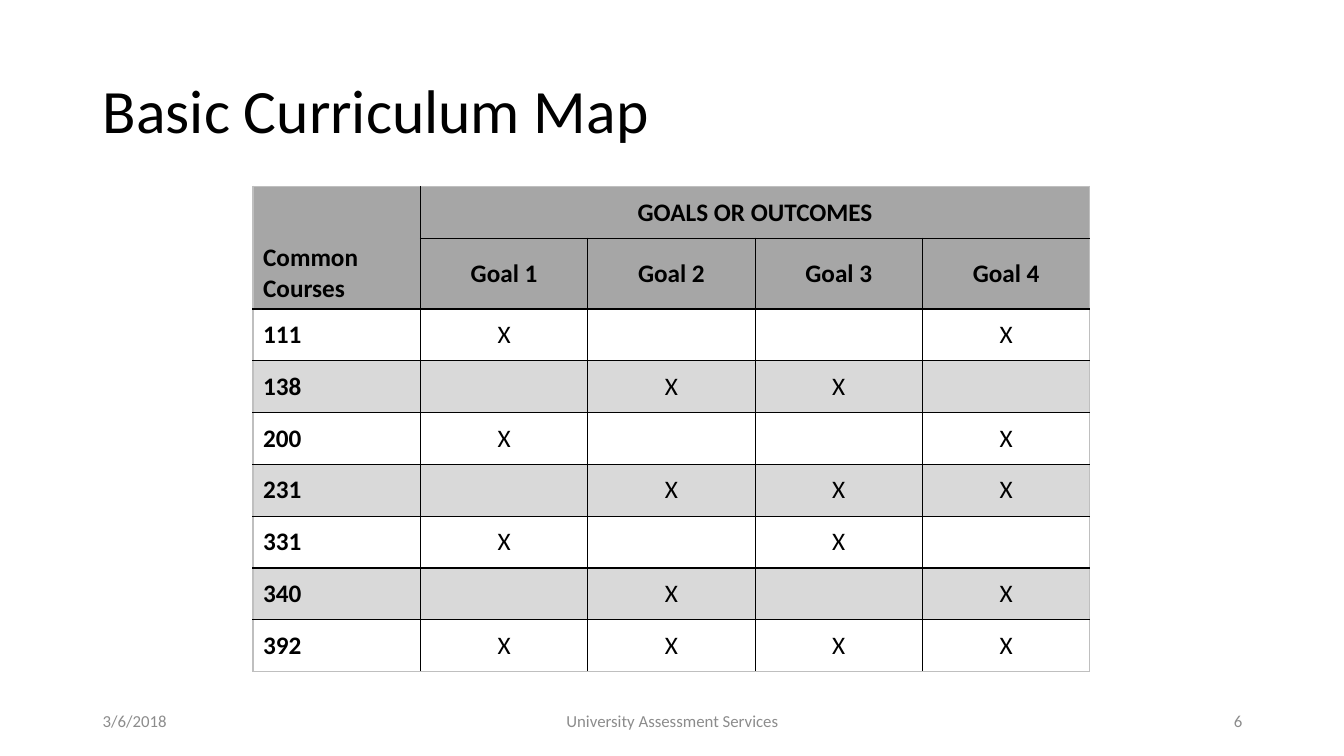
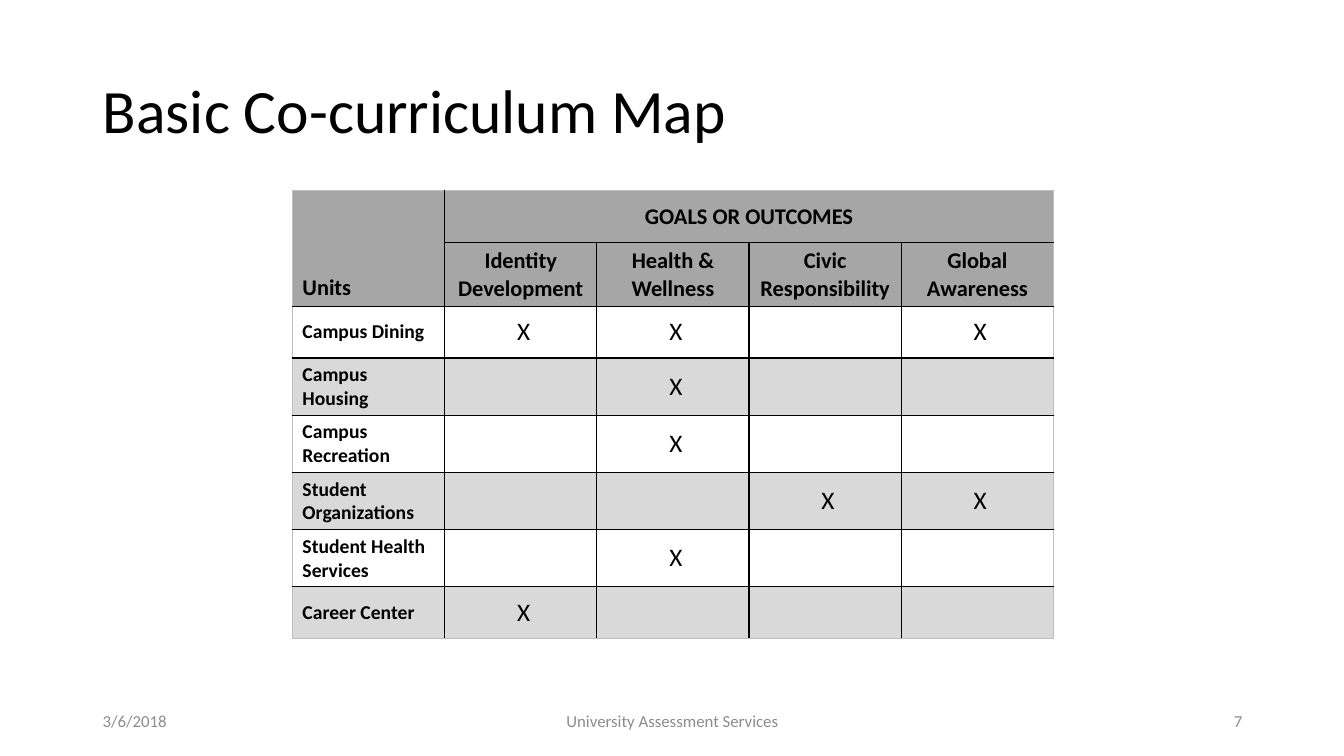
"""Build two curriculum map slides."""
from lxml.etree import SubElement
from pptx import Presentation
from pptx.dml.color import RGBColor
from pptx.enum.text import MSO_ANCHOR, MSO_AUTO_SIZE, PP_ALIGN
from pptx.oxml.ns import qn
from pptx.util import Emu, Pt

COLORS = {"text": "000000", "footer": "8C8C8C", "head": "A6A6A6", "band": "D9D9D9",
          "plain": "FFFFFF", "inner": "000000", "outer": "BFBFBF"}
FONT = "Calibri"
FOOTERS = [(92, 300, PP_ALIGN.LEFT), (442, 450, PP_ALIGN.CENTER), (942, 300, PP_ALIGN.RIGHT)]

COURSES = {"111": (1, 4), "138": (2, 3), "200": (1, 4), "231": (2, 3, 4),
           "331": (1, 3), "340": (2, 4), "392": (1, 2, 3, 4)}
UNITS = {"Campus Dining": (1, 2, 4), "Campus Housing": (2,), "Campus Recreation": (2,),
         "Student Organizations": (3, 4), "Student Health Services": (2,),
         "Career Center": (1,)}
COURSE_GOALS = [f"Goal {n}" for n in range(1, 5)]
UNIT_GOALS = ["Identity Development", "Health & Wellness", "Civic Responsibility",
              "Global Awareness"]


def px(n):
    """Turn px into EMU, at 100 px to the inch."""
    return Emu(n * 9144)


ROW_HEIGHT = px(463) // 9


def write(tf, text, size, color="text", align=PP_ALIGN.LEFT, bold=False):
    """Put one formatted paragraph into a text frame."""
    tf.text = text
    p = tf.paragraphs[0]
    p.alignment = align
    p.font.name, p.font.size, p.font.bold = FONT, Pt(size), bold
    p.font.color.rgb = RGBColor.from_string(COLORS[color])
    return p


def add_slide(prs, title, number):
    """Add a slide with its title and its three footer texts."""
    s = prs.slides.add_slide(prs.slide_layouts[5])
    sp = s.shapes.title
    sp.left, sp.top, sp.width, sp.height = px(92), px(40), px(1150), px(145)
    tf = sp.text_frame
    tf.auto_size = MSO_AUTO_SIZE.NONE
    tf.vertical_anchor = MSO_ANCHOR.MIDDLE
    write(tf, title, 44).line_spacing = 0.9
    texts = ("3/6/2018", "University Assessment Services", str(number))
    for text, (left, width, align) in zip(texts, FOOTERS):
        tf = s.shapes.add_textbox(px(left), px(695), px(width), px(40)).text_frame
        tf.word_wrap = True
        tf.vertical_anchor = MSO_ANCHOR.MIDDLE
        write(tf, text, 12, "footer", align)
    return s


def set_borders(cell, outer_sides):
    """Draw the four borders of a cell, lighter on the outside of the table."""
    tc_pr = cell._tc.get_or_add_tcPr()
    for side, is_outer in outer_sides.items():
        ln = SubElement(tc_pr, qn(f"a:ln{side}"), w=str(Pt(1)))
        fill = SubElement(ln, qn("a:solidFill"))
        SubElement(fill, qn("a:srgbClr"), val=COLORS["outer" if is_outer else "inner"])


def style_cells(table):
    """Set the borders, fill and anchor of every cell."""
    rows, cols = len(table.rows), len(table.columns)
    for row in range(rows):
        for col in range(cols):
            cell = table.cell(row, col)
            if not cell.is_spanned:
                set_borders(cell, {"L": col == 0, "R": col + cell.span_width == cols,
                                   "T": row == 0, "B": row + cell.span_height == rows})
            shade = "head" if row < 2 else "band" if row % 2 else "plain"
            cell.fill.solid()
            cell.fill.fore_color.rgb = RGBColor.from_string(COLORS[shade])
            cell.vertical_anchor = MSO_ANCHOR.MIDDLE


def add_map(s, left, top, col_width, corner, goals, marks, head_size, label_size,
            mark="X", goal_height=ROW_HEIGHT):
    """Add a table that marks which goals each row serves."""
    rows, cols = len(marks) + 2, len(goals) + 1
    table = s.shapes.add_table(rows, cols, px(left), px(top), px(col_width * cols),
                               ROW_HEIGHT * rows).table
    table.first_row = table.horz_banding = False
    for column in table.columns:
        column.width = px(col_width)
    for row in table.rows:
        row.height = ROW_HEIGHT
    table.rows[1].height = goal_height
    table.cell(0, 0).merge(table.cell(1, 0))
    table.cell(0, 1).merge(table.cell(0, cols - 1))
    style_cells(table)

    table.cell(0, 0).vertical_anchor = MSO_ANCHOR.BOTTOM
    write(table.cell(0, 0).text_frame, corner, head_size, bold=True)
    write(table.cell(0, 1).text_frame, "GOALS OR OUTCOMES", head_size,
          align=PP_ALIGN.CENTER, bold=True)
    for col, goal in enumerate(goals, 1):
        write(table.cell(1, col).text_frame, goal, head_size, align=PP_ALIGN.CENTER, bold=True)
    for row, (label, served) in enumerate(marks.items(), 2):
        write(table.cell(row, 0).text_frame, label, label_size, bold=True)
        for col in served:
            write(table.cell(row, col).text_frame, mark, 18, align=PP_ALIGN.CENTER)


def main():
    """Build and save the presentation."""
    prs = Presentation()
    prs.slide_width, prs.slide_height = px(1333), px(750)
    s = add_slide(prs, "Basic Curriculum Map", 6)
    add_map(s, 251, 185, 166, "Common Courses", COURSE_GOALS, COURSES, 18, 18)
    s = add_slide(prs, "Basic Co-curriculum Map", 7)
    add_map(s, 290, 189, 151, "Units", UNIT_GOALS, UNITS, 16, 14, " X", px(16))
    prs.save("out.pptx")


if __name__ == "__main__":
    main()
